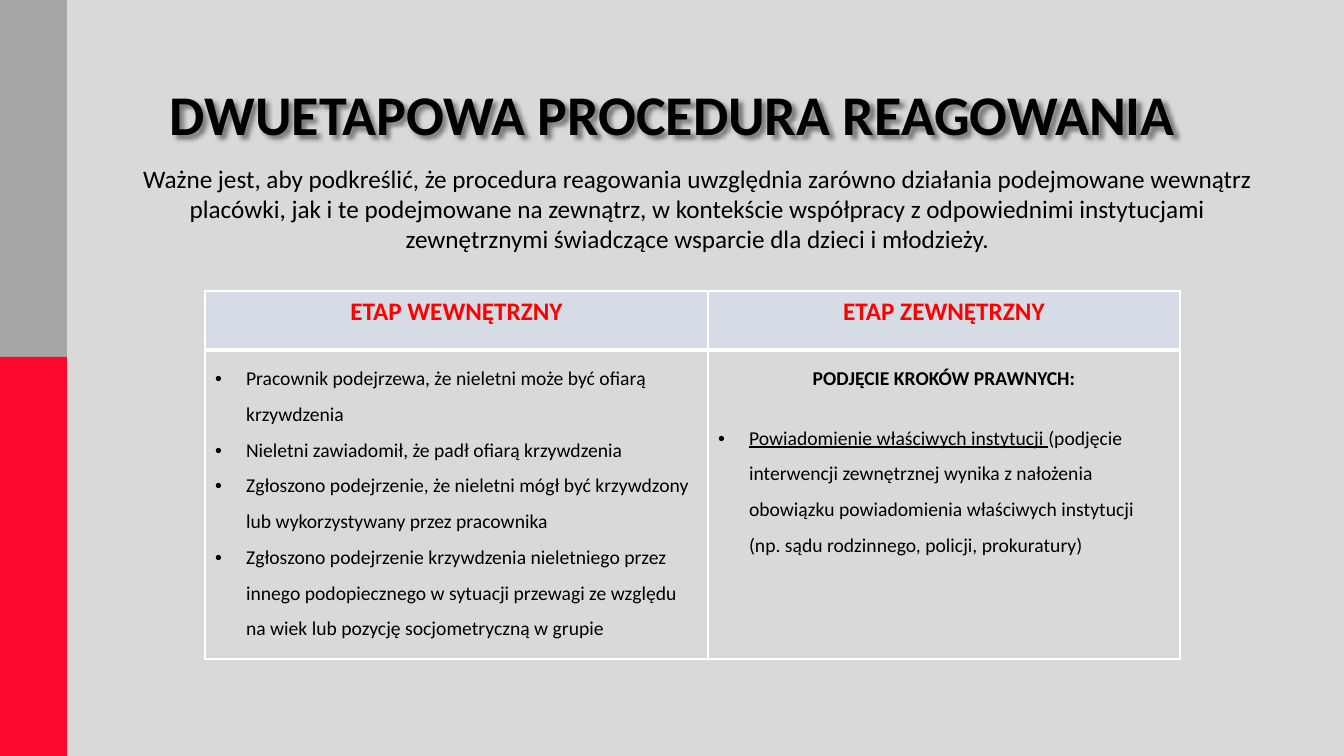
from lxml import etree
from pptx import Presentation
from pptx import util as u
from pptx.dml.color import RGBColor
from pptx.enum import shapes, text
from pptx.oxml import parse_xml
from pptx.oxml.ns import nsdecls, qn

PX = 914400 / 100.8
CENTER = text.PP_ALIGN.CENTER


def px(*values):
    """Turn pixel lengths into a list of EMU lengths."""
    return [u.Emu(round(v * PX)) for v in values]


def add_run(p, words, size, color="000000", **font):
    r = p.add_run()
    r.text = words
    font = {"name": "Calibri", "size": u.Pt(size), "bold": False, **font}
    for name, value in font.items():
        setattr(r.font, name, value)
    r.font.color.rgb = RGBColor.from_string(color)


prs = Presentation()
prs.slide_width, prs.slide_height = px(1344, 756)
s = prs.slides.add_slide(prs.slide_layouts[6])
s.background.fill.solid()
s.background.fill.fore_color.rgb = RGBColor.from_string("D9D9D9")

# Title and introduction
INTRO = (
    "Ważne jest, aby podkreślić, że procedura reagowania uwzględnia zarówno "
    "działania podejmowane wewnątrz placówki, jak i te podejmowane na zewnątrz, "
    "w kontekście współpracy z odpowiednimi instytucjami zewnętrznymi "
    "świadczące wsparcie dla dzieci i młodzieży."
)
boxes = []
for box, anchor, words, size, bold in [
    ((93, 40, 1159, 146), text.MSO_ANCHOR.MIDDLE,
     "DWUETAPOWA PROCEDURA REAGOWANIA", 40, True),
    ((118, 158, 1159, 102), text.MSO_ANCHOR.TOP, INTRO, 18, False),
]:
    sp = s.shapes.add_textbox(*px(*box))
    tf = sp.text_frame
    tf.word_wrap = True
    tf.vertical_anchor = anchor
    tf.paragraphs[0].alignment = CENTER
    add_run(tf.paragraphs[0], words, size, bold=bold)
    boxes.append(sp)

title = boxes[0]
title.element.spPr.append(parse_xml(
    f'<a:effectLst {nsdecls("a")}>'
    '<a:outerShdw blurRad="38100" dist="38100" dir="2700000" algn="tl">'
    '<a:srgbClr val="000000"><a:alpha val="43000"/></a:srgbClr>'
    '</a:outerShdw></a:effectLst>'))

# Side bar
for top, height, color in [(0, 357, "A6A6A6"), (357, 399, "FC082C")]:
    sp = s.shapes.add_shape(shapes.MSO_SHAPE.RECTANGLE, *px(0, top, 67, height))
    sp.shadow.inherit = False
    sp.fill.solid()
    sp.fill.fore_color.rgb = RGBColor.from_string(color)
    sp.line.fill.background()

# Table of the two stages
table = s.shapes.add_table(2, 2, *px(205, 291, 975, 368)).table
table.first_row = table.horz_banding = False
for col, width in zip(table.columns, px(503, 472)):
    col.width = width
for row, height in zip(table.rows, px(59, 309)):
    row.height = height

for i, heading in enumerate(["ETAP WEWNĘTRZNY", "ETAP ZEWNĘTRZNY"]):
    cell = table.cell(0, i)
    cell.fill.solid()
    cell.fill.fore_color.rgb = RGBColor.from_string("D6DCE5")
    p = cell.text_frame.paragraphs[0]
    p.alignment = CENTER
    add_run(p, heading, 18, "FF0000", bold=True)
    table.cell(1, i).fill.background()

internal, external = (table.cell(1, i).text_frame for i in range(2))
p = external.paragraphs[0]
p.alignment = CENTER
p.line_spacing = 1.5
p.space_after = u.Pt(17)
add_run(p, "PODJĘCIE KROKÓW PRAWNYCH:", 14, bold=True)

bullets = [
    (internal.paragraphs[0], "",
     "Pracownik podejrzewa, że nieletni może być ofiarą krzywdzenia"),
    (internal.add_paragraph(), "",
     "Nieletni zawiadomił, że padł ofiarą krzywdzenia"),
    (internal.add_paragraph(), "",
     "Zgłoszono podejrzenie, że nieletni mógł być krzywdzony lub "
     "wykorzystywany przez pracownika"),
    (internal.add_paragraph(), "",
     "Zgłoszono podejrzenie krzywdzenia nieletniego przez innego podopiecznego "
     "w sytuacji przewagi ze względu na wiek lub pozycję socjometryczną w grupie"),
    (external.add_paragraph(), "Powiadomienie właściwych instytucji ",
     "(podjęcie interwencji zewnętrznej wynika z nałożenia obowiązku "
     "powiadomienia właściwych instytucji (np. sądu rodzinnego, policji, "
     "prokuratury)"),
]
indent = px(31)[0]
for p, underlined, words in bullets:
    p.line_spacing = 1.5
    pPr = p._p.get_or_add_pPr()
    pPr.set("marL", str(indent))
    pPr.set("indent", str(-indent))
    etree.SubElement(pPr, qn("a:buFont"), typeface="Arial")
    etree.SubElement(pPr, qn("a:buChar"), char="•")
    if underlined:
        add_run(p, underlined, 14, underline=True)
    add_run(p, words, 14)

# White cell borders, heavier between heading and body
for row in range(2):
    for cell in table.rows[row].cells:
        tcPr = cell._tc.get_or_add_tcPr()
        for i, side in enumerate("LRTB"):
            heavy = (row, side) in [(0, "B"), (1, "T")]
            tcPr.insert(i, parse_xml(
                f'<a:ln{side} {nsdecls("a")} w="{u.Pt(3 if heavy else 1)}">'
                '<a:solidFill><a:srgbClr val="FFFFFF"/></a:solidFill>'
                f'</a:ln{side}>'))

prs.save("out.pptx")
